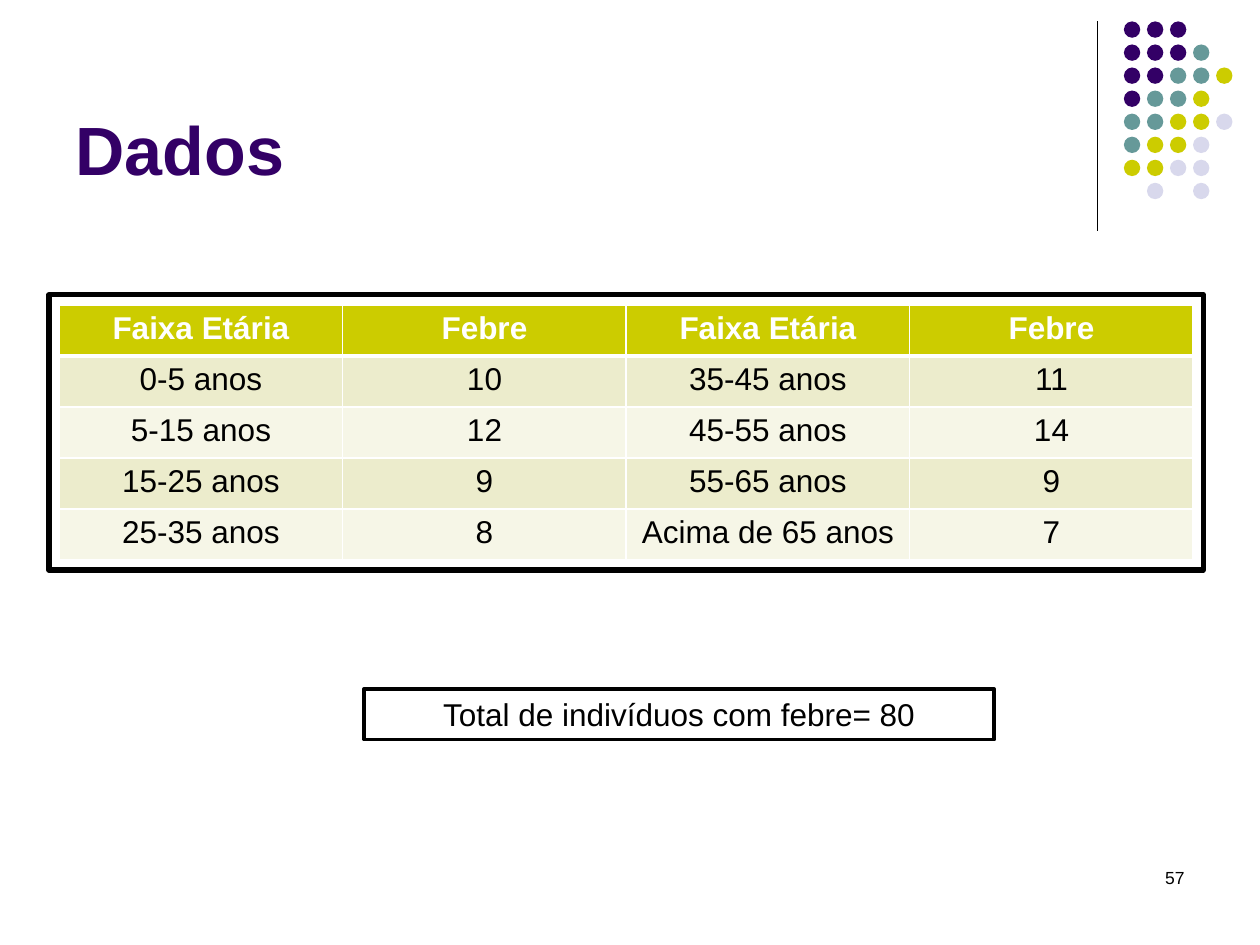
"""Builds the "Dados" slide: fever cases by age group, with their total."""
from dataclasses import dataclass

import pptx
import pptx.dml.color
import pptx.enum.shapes
import pptx.enum.text
import pptx.oxml
import pptx.oxml.ns
import pptx.util

inches, pt = pptx.util.Inches, pptx.util.Pt
rgb = pptx.dml.color.RGBColor.from_string
ALIGN, ANCHOR = pptx.enum.text.PP_ALIGN, pptx.enum.text.MSO_ANCHOR
SHAPE = pptx.enum.shapes.MSO_SHAPE


@dataclass(frozen=True)
class Theme:
    font: str = "Arial"
    purple: str = "330066"
    teal: str = "669999"
    lime: str = "CCCC00"
    lilac: str = "D8D8EC"
    ink: str = "000000"
    paper: str = "FFFFFF"
    bands: tuple = ("ECECCC", "F6F6E7")
    title: int = 39
    body: int = 18
    small: int = 10


THEME = Theme()
TITLE = "Dados"
TOTAL = "Total de indivíduos com febre= 80"
PAGE = "57"
HEADER = ("Faixa Etária", "Febre") * 2
CASES = [
    ("0-5 anos", "10"), ("5-15 anos", "12"), ("15-25 anos", "9"), ("25-35 anos", "8"),
    ("35-45 anos", "11"), ("45-55 anos", "14"), ("55-65 anos", "9"), ("Acima de 65 anos", "7"),
]
DOTS = ["PPP", "PPPT", "PPTTL", "PTTL", "TTLLV", "TLLV", "LLVV", " V V"]
DOT_COLORS = {"P": THEME.purple, "T": THEME.teal, "L": THEME.lime, "V": THEME.lilac}
DOT_LEFT, DOT_TOP, DOT_PITCH, DOT_SIZE = 8.92, 0.17, 0.183, 0.13
TABLE_LEFT, TABLE_TOP, COL_W, ROW_H = 0.47, 2.42, 2.25, 0.405
FRAME_GAP = 0.08


def box(left, top, width, height):
    return [inches(v) for v in (left, top, width, height)]


def write(tf, text, align, size, color=THEME.ink, bold=False):
    p = tf.paragraphs[0]
    p.alignment = align
    r = p.add_run()
    r.text = text
    style = {"name": THEME.font, "size": pt(size), "bold": bold}
    for key, value in style.items():
        setattr(r.font, key, value)
    r.font.color.rgb = rgb(color)


def add_shape(slide, kind, place, fill=None, line=None):
    sp = slide.shapes.add_shape(kind, *box(*place))
    sp.shadow.inherit = False
    if fill:
        sp.fill.solid()
        sp.fill.fore_color.rgb = rgb(fill)
    else:
        sp.fill.background()
    if line:
        sp.line.color.rgb = rgb(THEME.ink)
        sp.line.width = pt(line)
    else:
        sp.line.fill.background()
    return sp


def add_decoration(slide):
    line = slide.shapes.add_connector(
        pptx.enum.shapes.MSO_CONNECTOR.STRAIGHT, *box(8.71, 0.17, 8.71, 1.83))
    line.line.color.rgb = rgb(THEME.ink)
    line.line.width = pt(0.75)
    sppr = line._element.spPr
    sppr.append(sppr.makeelement(pptx.oxml.ns.qn("a:effectLst"), {}))
    for row, marks in enumerate(DOTS):
        for col, mark in enumerate(marks):
            if mark in DOT_COLORS:
                place = (DOT_LEFT + col * DOT_PITCH, DOT_TOP + row * DOT_PITCH, DOT_SIZE, DOT_SIZE)
                add_shape(slide, SHAPE.OVAL, place, fill=DOT_COLORS[mark])


def add_title(slide):
    sp = slide.shapes.title
    place = dict(zip(("left", "top", "width", "height"), box(0.5, 0.13, 8.25, 1.42)))
    for key, value in place.items():
        setattr(sp, key, value)
    tf = sp.text_frame
    tf.auto_size = pptx.enum.text.MSO_AUTO_SIZE.NONE
    tf.vertical_anchor = ANCHOR.BOTTOM
    write(tf, TITLE, ALIGN.LEFT, THEME.title, THEME.purple, True)


def set_borders(cell, bottom):
    tcpr = cell._tc.get_or_add_tcPr()
    for side, width in {"L": 1, "R": 1, "T": 1, "B": bottom}.items():
        tcpr.append(pptx.oxml.parse_xml(
            f'<a:ln{side} {pptx.oxml.ns.nsdecls("a")} w="{pt(width)}"><a:solidFill>'
            f'<a:srgbClr val="{THEME.paper}"/></a:solidFill></a:ln{side}>'))


def add_cases(slide):
    half = len(CASES) // 2
    rows = [HEADER] + [a + b for a, b in zip(CASES[:half], CASES[half:])]
    width, height = COL_W * len(HEADER), ROW_H * len(rows)
    table = slide.shapes.add_table(
        len(rows), len(HEADER), *box(TABLE_LEFT, TABLE_TOP, width, height)).table
    for i, row in enumerate(rows):
        head = i == 0
        fill = THEME.lime if head else THEME.bands[(i - 1) % 2]
        for j, text in enumerate(row):
            cell = table.cell(i, j)
            set_borders(cell, 3 if head or i == 0 else 1)
            cell.fill.solid()
            cell.fill.fore_color.rgb = rgb(fill)
            write(cell.text_frame, text, ALIGN.CENTER, THEME.body,
                  THEME.paper if head else THEME.ink, head)
    place = (TABLE_LEFT - FRAME_GAP, TABLE_TOP - FRAME_GAP,
             width + 2 * FRAME_GAP, height + 2 * FRAME_GAP)
    add_shape(slide, SHAPE.RECTANGLE, place, line=3)


def add_notes_below(slide):
    total = add_shape(slide, SHAPE.RECTANGLE, (2.89, 5.47, 5, 0.4), line=2.25)
    write(total.text_frame, TOTAL, ALIGN.CENTER, THEME.body)
    tf = slide.shapes.add_textbox(*box(7.17, 6.83, 2.33, 0.5)).text_frame
    tf.word_wrap = True
    write(tf, PAGE, ALIGN.RIGHT, THEME.small)


def main():
    prs = pptx.Presentation()
    prs.slide_width, prs.slide_height = inches(10), inches(7.5)
    slide = prs.slides.add_slide(prs.slide_layouts[5])
    for add in (add_decoration, add_title, add_cases, add_notes_below):
        add(slide)
    prs.save("out.pptx")


if __name__ == "__main__":
    main()
